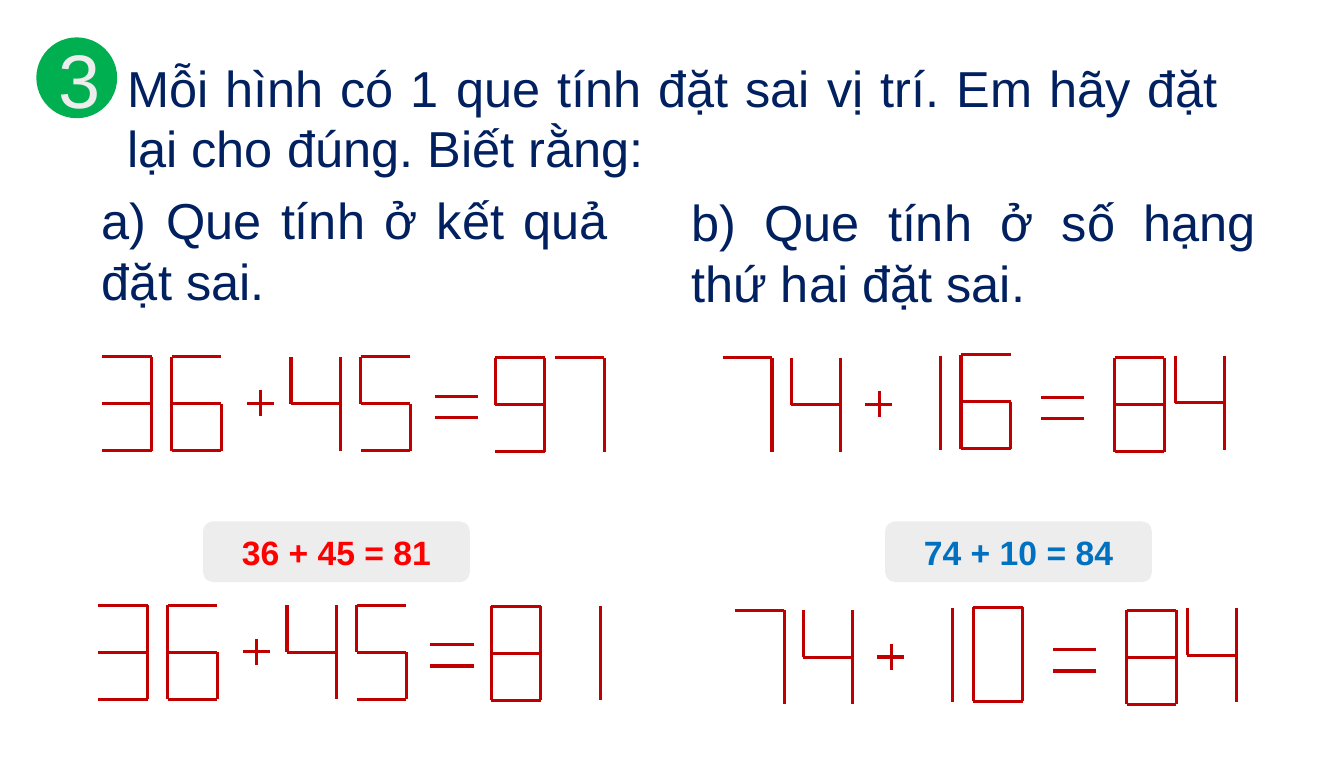
from lxml import etree
from pptx import Presentation
from pptx.dml.color import RGBColor
from pptx.enum.shapes import MSO_CONNECTOR, MSO_SHAPE
from pptx.enum.text import MSO_ANCHOR, MSO_AUTO_SIZE, PP_ALIGN
from pptx.oxml.ns import qn
from pptx.util import Inches, Pt

STRAIGHT = MSO_CONNECTOR.STRAIGHT
OVAL = MSO_SHAPE.OVAL
ROUNDED = MSO_SHAPE.ROUNDED_RECTANGLE
MIDDLE = MSO_ANCHOR.MIDDLE
GROW = MSO_AUTO_SIZE.SHAPE_TO_FIT_TEXT
CENTER = PP_ALIGN.CENTER
JUSTIFY = PP_ALIGN.JUSTIFY

NAVY = "002060"
GREEN = "00B050"
PALE = "EDEDED"
STICK_RED = "C00000"
ANSWER_RED = "FF0000"
ANSWER_BLUE = "0070C0"

DIGIT_WIDTH = 0.49
DIGIT_HEIGHT = 0.93
SEGMENTS = {
    "a": (0, 0, 1, 0),
    "b": (1, 0, 1, 0.5),
    "c": (1, 0.5, 1, 1),
    "d": (0, 1, 1, 1),
    "e": (0, 0.5, 0, 1),
    "f": (0, 0, 0, 0.5),
    "g": (0, 0.5, 1, 0.5),
}
DIGITS = {
    "0": "abcdef", "1": "bc", "3": "abcdg", "4": "bcfg", "5": "acdfg",
    "6": "acdefg", "7": "abc", "8": "abcdefg", "9": "abcdfg",
}
SIGNS = {
    "+": [(0, 0.46, 0.27, 0.46), (0.14, 0.33, 0.14, 0.59)],
    "=": [(0, 0.39, 0.43, 0.39), (0, 0.6, 0.43, 0.6)],
}
LEFT_SLOTS = [(0, 0), (0.69, 0), (1.43, 0), (1.87, 0), (2.56, 0),
              (3.29, 0), (3.89, 0.01), (4.48, 0.01)]
RIGHT_SLOTS = [(0, 0), (0.68, 0), (1.41, 0), (1.67, -0.02), (2.36, -0.03),
               (3.15, 0), (3.88, 0), (4.48, -0.02)]


def color(hex_value):
    return RGBColor.from_string(hex_value)


def write(frame, text, size, hex_value, alignment, bold=False):
    frame.word_wrap = True
    frame.text = text
    paragraph = frame.paragraphs[0]
    paragraph.alignment = alignment
    font = paragraph.runs[0].font
    font.name = "Arial"
    font.size = Pt(size)
    font.bold = bold
    font.color.rgb = color(hex_value)


def add_statement(slide, text, left, top, width):
    box = slide.shapes.add_textbox(Inches(left), Inches(top), Inches(width), Inches(1.31))
    write(box.text_frame, text, 36, NAVY, JUSTIFY)
    box.text_frame.auto_size = GROW


def add_badge(slide, kind, bounds, fill, text, size, hex_value, bold=False):
    badge = slide.shapes.add_shape(kind, *map(Inches, bounds))
    badge.shadow.inherit = False
    badge.fill.solid()
    badge.fill.fore_color.rgb = color(fill)
    badge.line.fill.background()
    badge.text_frame.vertical_anchor = MIDDLE
    write(badge.text_frame, text, size, hex_value, CENTER, bold)


def add_stick(group, *ends):
    stick = group.shapes.add_connector(STRAIGHT, *map(Inches, ends))
    stick.line.color.rgb = color(STICK_RED)
    stick.line.width = Pt(2.25)
    etree.SubElement(stick._element.spPr, qn("a:effectLst"))


def symbol_sticks(symbol):
    if symbol in SIGNS:
        return SIGNS[symbol]
    return [(x1 * DIGIT_WIDTH, y1 * DIGIT_HEIGHT, x2 * DIGIT_WIDTH, y2 * DIGIT_HEIGHT)
            for x1, y1, x2, y2 in (SEGMENTS[name] for name in DIGITS[symbol])]


def add_equation(slide, symbols, left, top, slots):
    group = slide.shapes.add_group_shape()
    for symbol, (dx, dy) in zip(symbols, slots):
        x, y = left + dx, top + dy
        for x1, y1, x2, y2 in symbol_sticks(symbol):
            add_stick(group, x + x1, y + y1, x + x2, y + y2)


def main():
    presentation = Presentation()
    presentation.slide_width = Inches(13.3)
    presentation.slide_height = Inches(7.5)
    slide = presentation.slides.add_slide(presentation.slide_layouts[6])

    add_statement(slide, "Mỗi hình có 1 que tính đặt sai vị trí. Em hãy đặt lại cho đúng. Biết rằng:",
                  1.16, 0.51, 11)
    add_badge(slide, OVAL, (0.36, 0.37, 0.8, 0.8), GREEN, "3", 54, PALE)
    add_statement(slide, "a) Que tính ở kết quả đặt sai.", 0.91, 1.82, 5.21)
    add_statement(slide, "b) Que tính ở số hạng thứ hai đặt sai.", 6.74, 1.84, 5.79)

    add_equation(slide, "36+45=97", 1.01, 3.53, LEFT_SLOTS)
    add_equation(slide, "74+16=84", 7.15, 3.54, RIGHT_SLOTS)
    for left, answer, hex_value in [(2.01, "36 + 45 = 81", ANSWER_RED),
                                    (8.76, "74 + 10 = 84", ANSWER_BLUE)]:
        add_badge(slide, ROUNDED, (left, 5.16, 2.64, 0.6), PALE, answer, 24, hex_value, True)
    add_equation(slide, "36+45=81", 0.97, 5.99, LEFT_SLOTS)
    add_equation(slide, "74+10=84", 7.27, 6.04, RIGHT_SLOTS)

    presentation.save("out.pptx")


if __name__ == "__main__":
    main()
